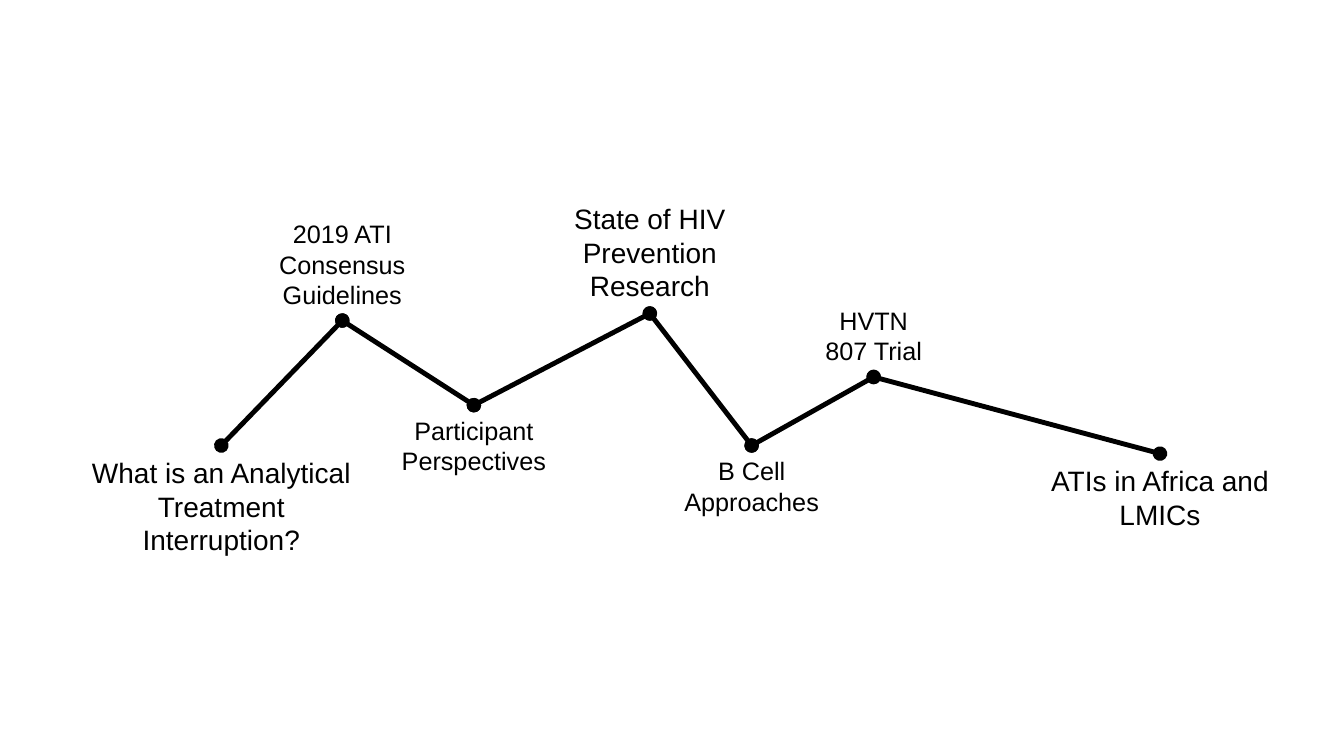
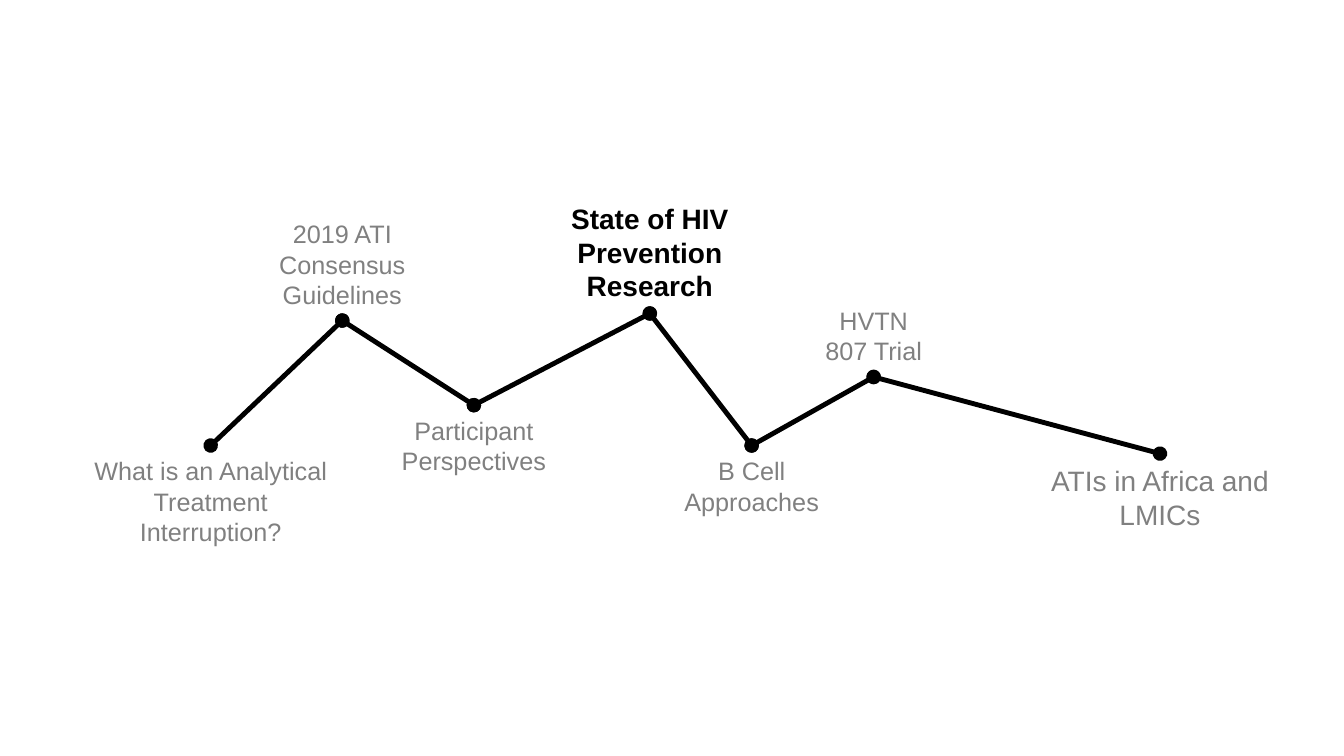
"""Build two agenda slides: a zigzag of topics, then the same with one topic highlighted."""
from dataclasses import dataclass
from itertools import pairwise

from lxml import etree
from pptx import Presentation
from pptx import util as u
from pptx.dml.color import RGBColor
from pptx.enum import shapes, text
from pptx.oxml.ns import qn


@dataclass(frozen=True)
class Theme:
    font: str = "Arial"
    ink: RGBColor = RGBColor(0, 0, 0)
    muted: RGBColor = RGBColor(0x80, 0x80, 0x80)
    large: int = 20
    regular: int = 18
    path_width: float = 3.5
    inset: float = 0.1


theme = Theme()
TOP, BOTTOM = 0, 2

OPENING = "What is an Analytical Treatment Interruption?"
PREVENTION = "State of HIV Prevention Research"
opening_large = (OPENING, 0.79, 4.42, 2.81, 1.21, theme.large, TOP)
opening_regular = (OPENING, 0.79, 4.42, 2.6, 1.11, theme.regular, TOP)
later_topics = [
    ("2019 ATI Consensus Guidelines", 2.61, 2.07, 1.57, 1.11, theme.regular, BOTTOM),
    ("Participant Perspectives", 3.83, 4.02, 1.74, 0.81, theme.regular, TOP),
    (PREVENTION, 5.25, 1.9, 2.39, 1.21, theme.large, BOTTOM),
    ("B Cell Approaches", 6.67, 4.42, 1.57, 0.81, theme.regular, TOP),
    ("HVTN 807 Trial", 8.06, 2.93, 1.21, 0.81, theme.regular, BOTTOM),
    ("ATIs in Africa and LMICs", 10.31, 4.5, 2.39, 0.88, theme.large, TOP),
]
agendas = [(opening_large, None), (opening_regular, PREVENTION)]


def add_topic(slide, wording, left, top, width, height, size, color, bold):
    topic = slide.shapes.add_textbox(*map(u.Inches, (left, top, width, height)))
    frame = topic.text_frame
    frame.word_wrap = True
    frame.auto_size = text.MSO_AUTO_SIZE.SHAPE_TO_FIT_TEXT
    frame.margin_left = frame.margin_right = u.Inches(theme.inset)
    frame.margin_top = frame.margin_bottom = u.Inches(theme.inset)
    paragraph = frame.paragraphs[0]
    paragraph.text = wording
    paragraph.alignment = text.PP_ALIGN.CENTER
    paragraph.font.name = theme.font
    paragraph.font.size = u.Pt(size)
    paragraph.font.bold = bold
    paragraph.font.color.rgb = color
    return topic


def add_path(slide, start, start_side, end, end_side):
    segment = slide.shapes.add_connector(shapes.MSO_CONNECTOR.STRAIGHT, 0, 0, 0, 0)
    segment.begin_connect(start, start_side)
    segment.end_connect(end, end_side)
    segment.line.width = u.Pt(theme.path_width)
    segment.line.color.rgb = theme.ink
    outline = segment.line._get_or_add_ln()
    for dot in ("a:headEnd", "a:tailEnd"):
        etree.SubElement(outline, qn(dot), type="oval")
    etree.SubElement(segment._element.spPr, qn("a:effectLst"))


deck = Presentation()
deck.slide_width, deck.slide_height = u.Inches(13.33), u.Inches(7.5)

for opening, highlight in agendas:
    slide = deck.slides.add_slide(deck.slide_layouts[6])
    stops = []
    for wording, left, top, width, height, size, side in [opening, *later_topics]:
        color = theme.ink if highlight in (None, wording) else theme.muted
        topic = add_topic(slide, wording, left, top, width, height, size, color, wording == highlight)
        stops.append((topic, side))
    for start, end in pairwise(stops):
        add_path(slide, *start, *end)

deck.save("out.pptx")
